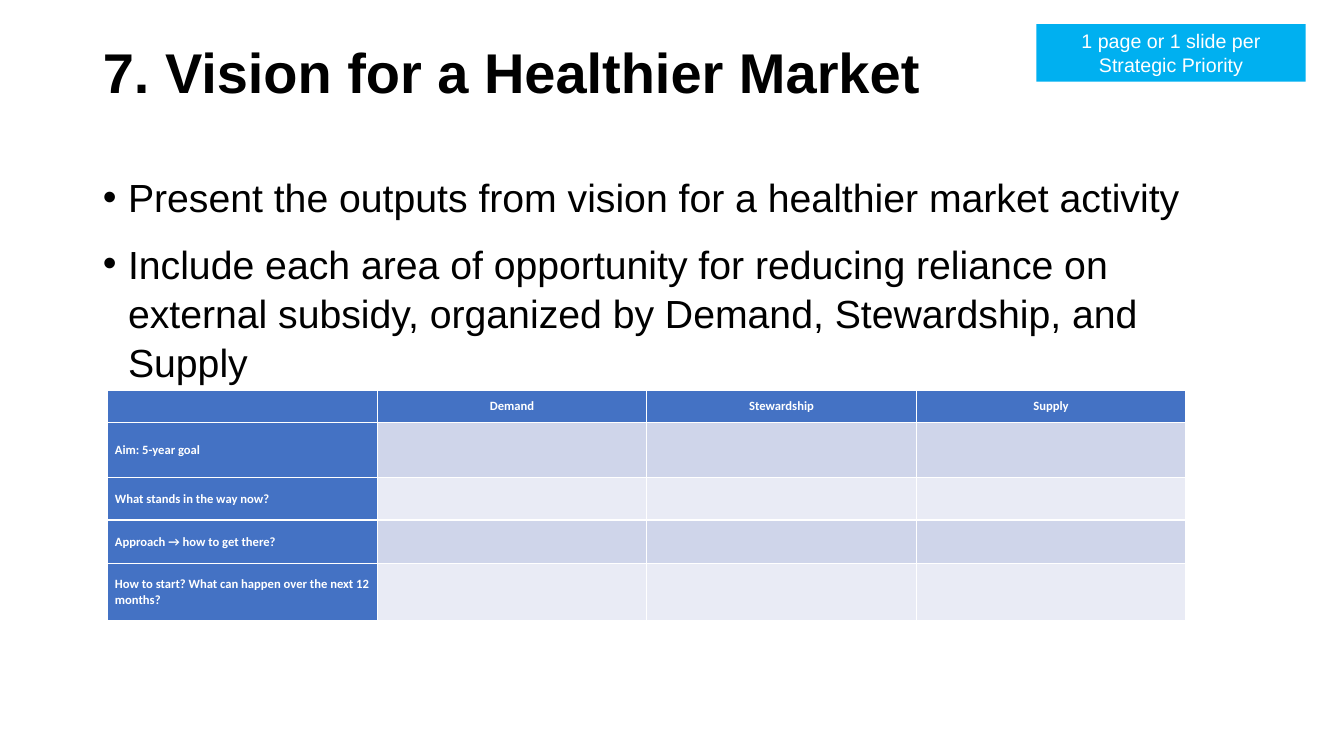
from lxml import etree
from pptx import Presentation
from pptx.dml.color import RGBColor
from pptx.enum import shapes, text
from pptx.oxml import ns
from pptx.util import Inches, Pt

BLACK = RGBColor(0x00, 0x00, 0x00)
WHITE = RGBColor(0xFF, 0xFF, 0xFF)
CYAN = RGBColor(0x00, 0xB0, 0xF0)
BLUE = RGBColor(0x44, 0x72, 0xC4)
BANDS = (RGBColor(0xCF, 0xD5, 0xEA), RGBColor(0xE9, 0xEB, 0xF5))

TITLE_FONT = dict(name="Arial", size=Pt(40), bold=True, color=BLACK)
BODY_FONT = dict(name="Arial", size=Pt(28), color=BLACK)
TAG_FONT = dict(name="Arial", size=Pt(14), color=WHITE)
TABLE_FONT = dict(name="Calibri", size=Pt(9), bold=True, color=WHITE)

BULLETS = [
    "Present the outputs from vision for a healthier market activity",
    "Include each area of opportunity for reducing reliance on external subsidy, "
    "organized by Demand, Stewardship, and Supply",
]
AREAS = ["", "Demand", "Stewardship", "Supply"]
QUESTIONS = [
    "Aim: 5-year goal",
    "What stands in the way now?",
    "Approach → how to get there?",
    "How to start? What can happen over the next 12 months?",
]
ROW_HEIGHTS = [0.32, 0.55, 0.42, 0.43, 0.57]


def write(p, words, font, align=text.PP_ALIGN.LEFT):
    p.alignment = align
    r = p.add_run()
    r.text = words
    for key, value in font.items():
        if key == "color":
            r.font.color.rgb = value
        else:
            setattr(r.font, key, value)


def place(sp, box):
    for side, value in zip(("left", "top", "width", "height"), box):
        setattr(sp, side, Inches(value))


def prepare_frame(sp, anchor):
    tf = sp.text_frame
    tf.word_wrap = True
    tf.auto_size = text.MSO_AUTO_SIZE.NONE
    tf.vertical_anchor = anchor
    return tf


def add_title(s, box):
    place(s.shapes.title, box)
    p = prepare_frame(s.shapes.title, text.MSO_ANCHOR.TOP).paragraphs[0]
    p.line_spacing = 0.9
    write(p, "7. Vision for a Healthier Market", TITLE_FONT)


def add_bullets(s, box):
    body = s.placeholders[1]
    place(body, box)
    tf = prepare_frame(body, text.MSO_ANCHOR.TOP)
    for i, words in enumerate(BULLETS):
        p = tf.add_paragraph() if i else tf.paragraphs[0]
        write(p, words, BODY_FONT)
        for key, value in dict(line_spacing=1.05, space_before=Pt(0), space_after=Pt(12)).items():
            setattr(p, key, value)
        pPr = p._p.get_or_add_pPr()
        pPr.set("marL", str(Inches(0.25)))
        pPr.set("indent", str(Inches(-0.25)))
        etree.SubElement(pPr, ns.qn("a:buFont"), typeface="Arial")
        etree.SubElement(pPr, ns.qn("a:buChar"), char="•")


def add_tag(s, box):
    sp = s.shapes.add_shape(shapes.MSO_SHAPE.RECTANGLE, *map(Inches, box))
    sp.shadow.inherit = False
    sp.fill.solid()
    sp.fill.fore_color.rgb = CYAN
    sp.line.fill.background()
    tf = prepare_frame(sp, text.MSO_ANCHOR.MIDDLE)
    write(tf.paragraphs[0], "1 page or 1 slide per Strategic Priority", TAG_FONT, text.PP_ALIGN.CENTER)


def add_vision_table(s, box):
    rows = [AREAS] + [[question, "", "", ""] for question in QUESTIONS]
    table = s.shapes.add_table(len(rows), len(AREAS), *map(Inches, box)).table
    table.first_col = True
    for column in table.columns:
        column.width = Inches(box[2] / len(AREAS))
    for i, row in enumerate(rows):
        table.rows[i].height = Inches(ROW_HEIGHTS[i])
        for j, words in enumerate(row):
            cell = table.cell(i, j)
            cell.fill.solid()
            cell.fill.fore_color.rgb = BLUE if i == 0 or j == 0 else BANDS[(i - 1) % 2]
            cell.vertical_anchor = text.MSO_ANCHOR.MIDDLE
            cell.margin_left = cell.margin_right = Inches(0.07)
            cell.margin_top = cell.margin_bottom = 0
            if words:
                align = text.PP_ALIGN.LEFT if i else text.PP_ALIGN.CENTER
                write(cell.text_frame.paragraphs[0], words, TABLE_FONT, align)


def main():
    prs = Presentation()
    prs.slide_width, prs.slide_height = Inches(13.33), Inches(7.5)
    s = prs.slides.add_slide(prs.slide_layouts[1])
    add_title(s, (0.92, 0.4, 11.5, 1.45))
    add_bullets(s, (0.92, 1.65, 11.5, 4.76))
    add_tag(s, (10.28, 0.24, 2.67, 0.57))
    add_vision_table(s, (1.07, 3.87, 10.69, sum(ROW_HEIGHTS)))
    prs.save("out.pptx")


if __name__ == "__main__":
    main()
